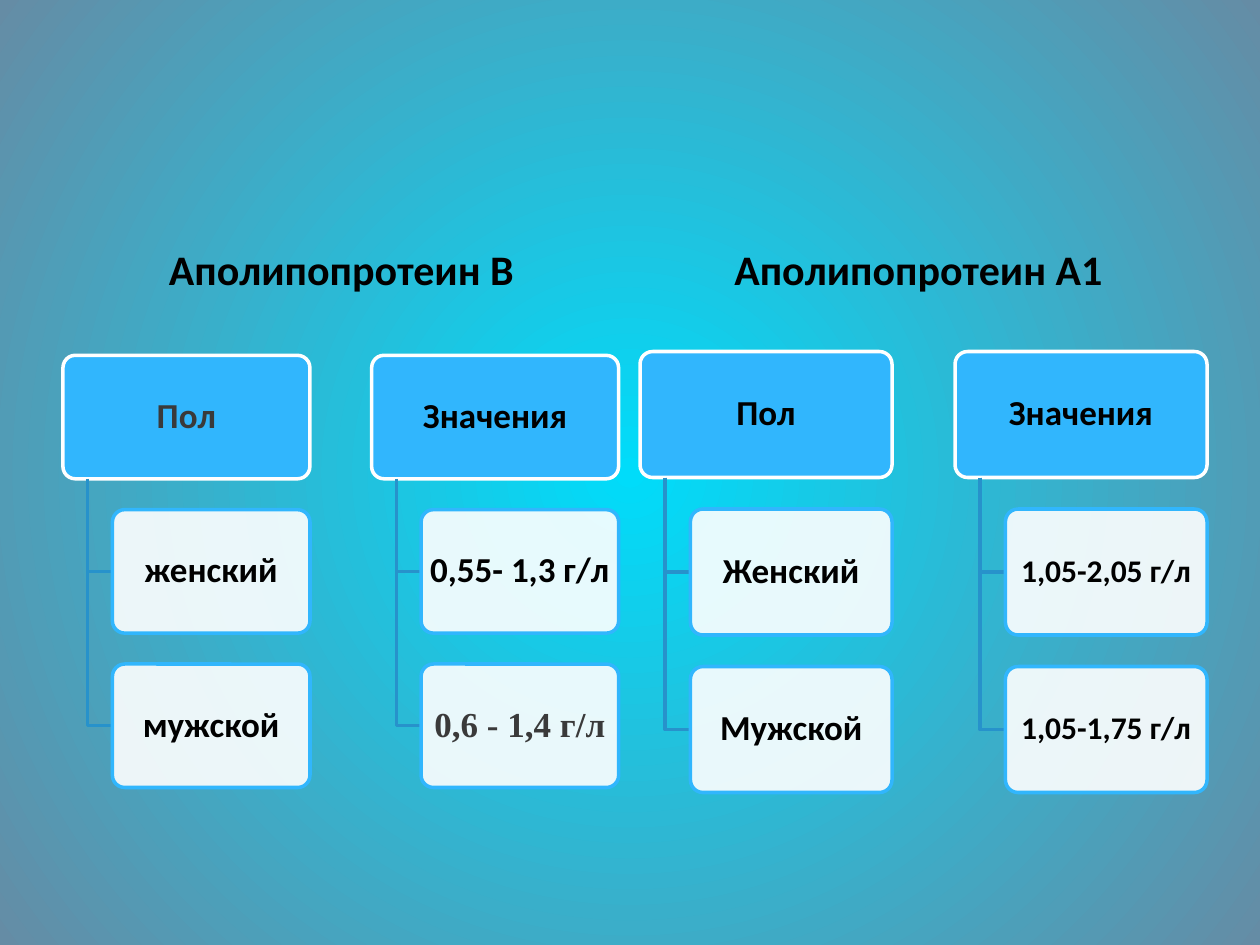
from pptx import Presentation
from pptx import util as u
from pptx.dml.color import RGBColor
from pptx.enum import shapes, text
from pptx.oxml import parse_xml
from pptx.oxml.ns import nsdecls, qn

BLACK = RGBColor(0x00, 0x00, 0x00)
GRAY = RGBColor(0x3A, 0x3A, 0x3A)
WHITE = RGBColor(0xFF, 0xFF, 0xFF)
BLUE = RGBColor(0x31, 0xB6, 0xFD)
LINE_BLUE = RGBColor(0x27, 0x92, 0xCB)
CYAN = RGBColor(0x00, 0xDC, 0xFA)
SLATE = RGBColor(0x65, 0x8C, 0xA5)


def set_background(s):
    """Radial gradient, cyan in the centre and slate at the edges."""
    fill = s.background.fill
    fill.gradient()
    for stop, position, color in zip(fill.gradient_stops, (0, 1), (CYAN, SLATE)):
        stop.position = position
        stop.color.rgb = color
    lin = s._element.find(".//" + qn("a:lin"))
    lin.getparent().replace(lin, parse_xml(
        f'<a:path {nsdecls("a")} path="circle">'
        '<a:fillToRect l="50000" t="50000" r="50000" b="50000"/></a:path>'))


def format_run(p, size, color=BLACK, font="Calibri"):
    f = p.runs[0].font
    f.name, f.size, f.bold = font, u.Pt(size), True
    f.color.rgb = color


def set_heading(sp, left, label):
    sp.left, sp.top = u.Inches(left), u.Inches(1.68)
    sp.width, sp.height = u.Inches(4.42), u.Inches(0.7)
    tf = sp.text_frame
    tf.text = label
    tf.vertical_anchor = text.MSO_ANCHOR.BOTTOM
    p = tf.paragraphs[0]
    p.alignment = text.PP_ALIGN.CENTER
    format_run(p, 24)


def add_box(group, x, y, w, h, fill, line, label, size=20, color=BLACK, font="Calibri"):
    sp = group.shapes.add_shape(shapes.MSO_SHAPE.ROUNDED_RECTANGLE,
                                *map(u.Inches, (x, y, w, h)))
    sp.adjustments[0] = 0.1
    sp.shadow.inherit = False
    sp.fill.solid()
    sp.fill.fore_color.rgb = fill
    sp.line.color.rgb = line
    sp.line.width = u.Pt(2)
    tf = sp.text_frame
    tf.text = label
    tf.word_wrap = True
    tf.vertical_anchor = text.MSO_ANCHOR.MIDDLE
    tf.margin_left = tf.margin_right = u.Inches(0.04)
    tf.margin_top = tf.margin_bottom = u.Inches(0.03)
    p = tf.paragraphs[0]
    p.alignment = text.PP_ALIGN.CENTER
    p.line_spacing = 0.9
    format_run(p, size, color, font)
    return sp


def set_opacity(sp, percent):
    rgb = sp._element.spPr.find(qn("a:solidFill"))[0]
    rgb.append(parse_xml(f'<a:alpha {nsdecls("a")} val="{percent * 1000}"/>'))


def add_elbow(group, x, top, right, bottom):
    points = [(u.Inches(a), u.Inches(b)) for a, b in ((x, bottom), (right, bottom))]
    builder = group.shapes.build_freeform(u.Inches(x), u.Inches(top))
    builder.add_line_segments(points, close=False)
    sp = builder.convert_to_shape()
    sp.shadow.inherit = False
    sp.fill.background()
    sp.line.color.rgb = LINE_BLUE
    sp.line.width = u.Pt(2)


def add_tree(s, left, top, w, columns):
    """Columns of a header and its children; every gap derives from header width w."""
    group = s.shapes.add_group_shape()
    h = w / 2
    for i, (header, *children) in enumerate(columns):
        x = left + i * 1.25 * w
        add_box(group, x, top, w, h, BLUE, WHITE, **header)
        for j, child in enumerate(children, start=1):
            y = top + j * 1.25 * h
            add_elbow(group, x + 0.1 * w, top + h, x + 0.2 * w, y + h / 2)
            sp = add_box(group, x + 0.2 * w, y, 0.8 * w, h, WHITE, BLUE, **child)
            set_opacity(sp, 90)


def main():
    prs = Presentation()
    prs.slide_width, prs.slide_height = u.Inches(10), u.Inches(7.5)
    s = prs.slides.add_slide(prs.slide_layouts[4])
    set_background(s)
    headings = {1: (0.5, "Аполипопротеин В"), 3: (5.08, "Аполипопротеин А1")}
    for sp in list(s.placeholders):
        idx = sp.placeholder_format.idx
        if idx in headings:
            set_heading(sp, *headings[idx])
        else:
            sp._element.getparent().remove(sp._element)

    add_tree(s, 0.5, 2.82, 1.96, [
        [dict(label="Пол", color=GRAY), dict(label="женский"), dict(label="мужской")],
        [dict(label="Значения"), dict(label="0,55- 1,3 г/л"),
         dict(label="0,6 - 1,4 г/л", color=GRAY, font="Times New Roman")],
    ])
    add_tree(s, 5.08, 2.79, 2, [
        [dict(label="Пол"), dict(label="Женский"), dict(label="Мужской")],
        [dict(label="Значения"), dict(label="1,05-2,05 г/л", size=18),
         dict(label="1,05-1,75 г/л", size=18)],
    ])
    prs.save("out.pptx")


if __name__ == "__main__":
    main()
